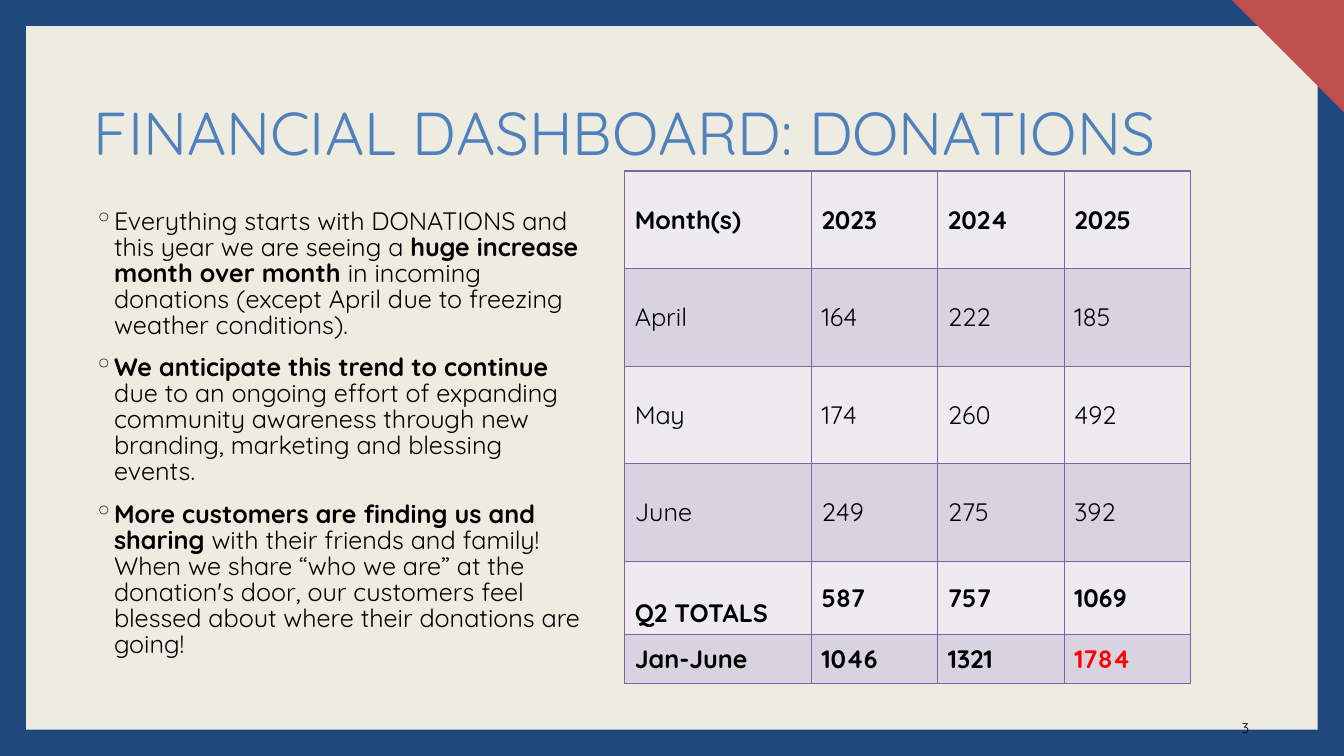
from dataclasses import dataclass

import lxml.etree
import pptx
import pptx.dml.color
import pptx.enum.shapes
import pptx.enum.text
import pptx.oxml
import pptx.oxml.ns
import pptx.shapes.base
import pptx.slide
import pptx.table
import pptx.text.text
import pptx.util

Pt = pptx.util.Pt
ANCHOR = pptx.enum.text.MSO_ANCHOR
ALIGN = pptx.enum.text.PP_ALIGN

FONT = "Quicksand"
WIDTH, HEIGHT = 960, 540
MARGIN = 18.72
CORNER = 80
BLACK, NAVY, CREAM, RED = "000000", "1F497D", "EEECE1", "C0504D"
TITLE_BLUE, BORDER_PURPLE, ALERT_RED = "4F81BD", "8064A2", "FF0000"
BANDS = ("EDEAF0", "D8D3E0")


@dataclass
class Span:
    text: str
    bold: bool = False


@dataclass
class TableRow:
    values: tuple[str, ...]
    height: float
    bold: bool = False


BULLETS = [
    [Span("Everything starts with DONATIONS and this year we are seeing a "),
     Span("huge increase month over month ", True),
     Span("in incoming donations (except April due to freezing weather conditions).")],
    [Span("We anticipate this trend to continue", True),
     Span(" due to an ongoing effort of expanding community awareness through new "
          "branding, marketing and blessing events.")],
    [Span("More customers are finding us and sharing ", True),
     Span("with their friends and family! When we share “who we are” at the donation's "
          "door, our customers feel blessed about where their donations are going!")],
]

COLUMN_WIDTHS = (133.4, 90.3, 90.3, 90.3)
DONATIONS = [
    TableRow(("Month(s)", "2023", "2024", "2025"), 69.7, True),
    TableRow(("April", "164", "222", "185"), 69.7),
    TableRow(("May", "174", "260", "492"), 69.7),
    TableRow(("June", "249", "275", "392"), 69.7),
    TableRow(("Q2 TOTALS", "587", "757", "1069"), 52.2, True),
    TableRow(("Jan-June", "1046", "1321", "1784"), 34.9, True),
]


def rgb(color: str) -> pptx.dml.color.RGBColor:
    return pptx.dml.color.RGBColor.from_string(color)


def format_run(r: pptx.text.text._Run, size: float, color: str = BLACK,
               bold: bool = False) -> None:
    r.font.name = FONT
    r.font.size = Pt(size)
    r.font.bold = bold
    r.font.color.rgb = rgb(color)


def paint(sp: pptx.shapes.base.BaseShape, color: str) -> None:
    sp.shadow.inherit = False
    sp.fill.solid()
    sp.fill.fore_color.rgb = rgb(color)
    sp.line.fill.background()


def add_text_frame(s: pptx.slide.Slide, left: float, top: float, width: float,
                   height: float) -> pptx.text.text.TextFrame:
    tf = s.shapes.add_textbox(Pt(left), Pt(top), Pt(width), Pt(height)).text_frame
    tf.word_wrap = True
    return tf


def add_background(s: pptx.slide.Slide) -> None:
    s.background.fill.solid()
    s.background.fill.fore_color.rgb = rgb(NAVY)
    panel = s.shapes.add_shape(
        pptx.enum.shapes.MSO_SHAPE.RECTANGLE, Pt(MARGIN), Pt(MARGIN),
        Pt(WIDTH - 2 * MARGIN), Pt(HEIGHT - 2 * MARGIN))
    paint(panel, CREAM)
    fb = s.shapes.build_freeform(Pt(WIDTH - CORNER), 0)
    fb.add_line_segments([(Pt(WIDTH), 0), (Pt(WIDTH), Pt(CORNER))], close=True)
    paint(fb.convert_to_shape(), RED)


def add_title(s: pptx.slide.Slide) -> None:
    tf = add_text_frame(s, 60, 70.5, 840, 104.5)
    tf.text = "FINANCIAL DASHBOARD: DONATIONS"
    p = tf.paragraphs[0]
    p.line_spacing = 0.9
    format_run(p.runs[0], 43.2, TITLE_BLUE)


def set_bullet(p: pptx.text.text._Paragraph, indent: float) -> None:
    pPr = p._p.get_or_add_pPr()
    pPr.set("marL", str(Pt(indent)))
    pPr.set("indent", str(-Pt(indent)))
    color = lxml.etree.SubElement(pPr, pptx.oxml.ns.qn("a:buClr"))
    lxml.etree.SubElement(color, pptx.oxml.ns.qn("a:srgbClr"), val="262626")
    lxml.etree.SubElement(pPr, pptx.oxml.ns.qn("a:buChar"), char="◦")


def add_bullets(s: pptx.slide.Slide) -> None:
    tf = add_text_frame(s, 60, 146, 367.2, 351.4)
    for i, spans in enumerate(BULLETS):
        p = tf.add_paragraph() if i else tf.paragraphs[0]
        p.line_spacing = 0.86
        p.space_after = Pt(12)
        set_bullet(p, 14.4)
        for span in spans:
            r = p.add_run()
            r.text = span.text
            format_run(r, 18, bold=span.bold)


def set_borders(cell: pptx.table._Cell) -> None:
    tcPr = cell._tc.get_or_add_tcPr()
    for side in ("lnL", "lnR", "lnT", "lnB"):
        ln = lxml.etree.SubElement(tcPr, pptx.oxml.ns.qn(f"a:{side}"), w=str(Pt(1)))
        fill = lxml.etree.SubElement(ln, pptx.oxml.ns.qn("a:solidFill"))
        lxml.etree.SubElement(fill, pptx.oxml.ns.qn("a:srgbClr"), val=BORDER_PURPLE)


def add_donation_table(s: pptx.slide.Slide) -> None:
    frame = s.shapes.add_table(
        len(DONATIONS), len(COLUMN_WIDTHS), Pt(446.2), Pt(122.2),
        Pt(sum(COLUMN_WIDTHS)), Pt(sum(row.height for row in DONATIONS)))
    table = frame.table
    table.first_row = table.horz_banding = False
    for column, width in zip(table.columns, COLUMN_WIDTHS):
        column.width = Pt(width)
    for i, row in enumerate(DONATIONS):
        table.rows[i].height = Pt(row.height)
        for j, value in enumerate(row.values):
            cell = table.cell(i, j)
            set_borders(cell)
            cell.fill.solid()
            cell.fill.fore_color.rgb = rgb(BANDS[i % 2])
            cell.vertical_anchor = ANCHOR.MIDDLE
            cell.text_frame.text = value
            color = ALERT_RED if value == "1784" else BLACK
            format_run(cell.text_frame.paragraphs[0].runs[0], 18, color, row.bold)
            if value == "Q2 TOTALS":
                cell.margin_top = Pt(26)


def add_slide_number(s: pptx.slide.Slide) -> None:
    tf = add_text_frame(s, 863.3, 500.4, 36, 28.8)
    tf.vertical_anchor = ANCHOR.BOTTOM
    tf.text = "3"
    p = tf.paragraphs[0]
    p.alignment = ALIGN.RIGHT
    format_run(p.runs[0], 10)


def main() -> None:
    prs = pptx.Presentation()
    prs.slide_width, prs.slide_height = Pt(WIDTH), Pt(HEIGHT)
    s = prs.slides.add_slide(prs.slide_layouts[6])
    add_background(s)
    add_title(s)
    add_bullets(s)
    add_donation_table(s)
    add_slide_number(s)
    prs.save("out.pptx")


if __name__ == "__main__":
    main()
